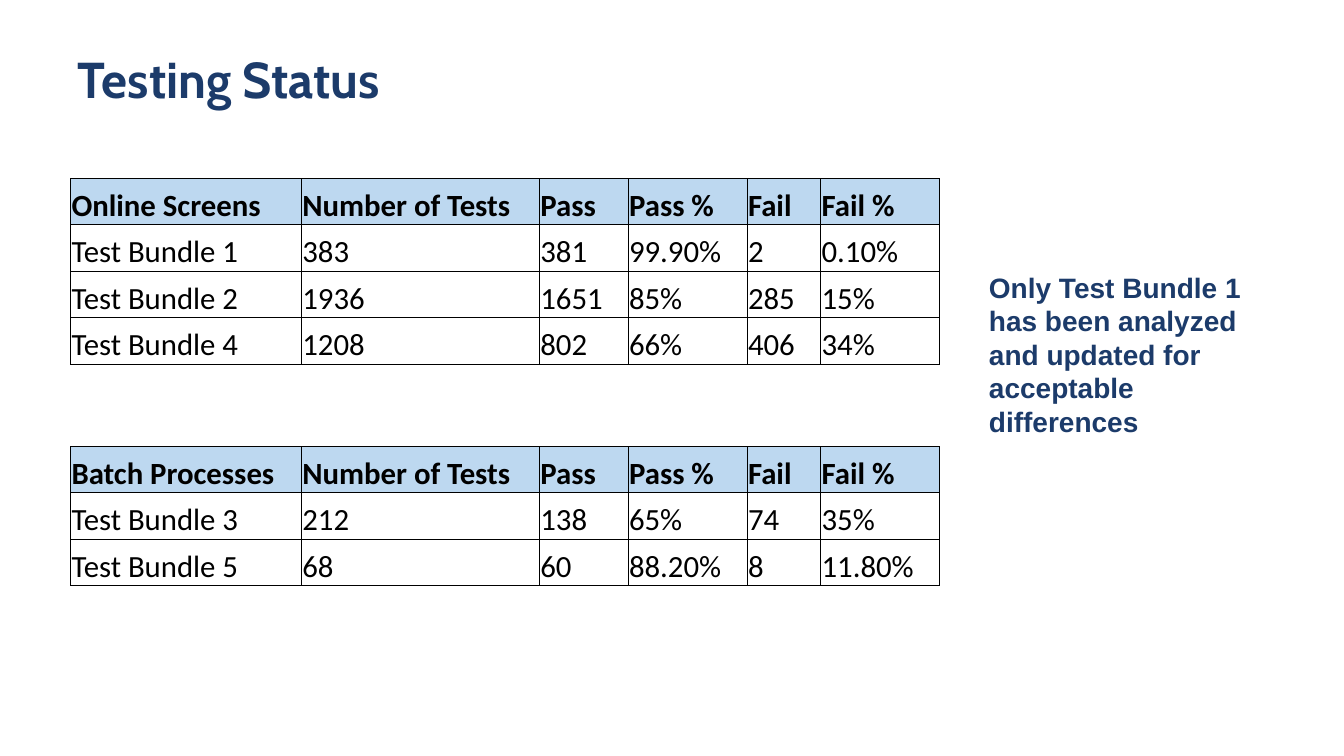
"""Build the testing status slide with its results table and side note."""
from dataclasses import dataclass

import lxml.etree
import pptx
import pptx.dml.color
import pptx.enum.text
import pptx.oxml.ns
import pptx.util

TITLE = "Testing Status"
NOTE = "Only Test Bundle 1 has been analyzed and updated for acceptable differences"
MEASURES = ("Number of Tests", "Pass", "Pass %", "Fail", "Fail %")
ONLINE_SCREENS = [
    ("Online Screens", *MEASURES),
    ("Test Bundle 1", "383", "381", "99.90%", "2", "0.10%"),
    ("Test Bundle 2", "1936", "1651", "85%", "285", "15%"),
    ("Test Bundle 4", "1208", "802", "66%", "406", "34%"),
]
BATCH_PROCESSES = [
    ("Batch Processes", *MEASURES),
    ("Test Bundle 3", "212", "138", "65%", "74", "35%"),
    ("Test Bundle 5", "68", "60", "88.20%", "8", "11.80%"),
]
SPACER = ("",) * (len(MEASURES) + 1)
ROWS = [*ONLINE_SCREENS, SPACER, *BATCH_PROCESSES]
HEADERS = (ONLINE_SCREENS[0], BATCH_PROCESSES[0])

SLIDE_SIZE = (13.33, 7.5)
TITLE_BOX = (0.67, 0.13, 11.5, 1.01)
NOTE_BOX = (9.71, 2.63, 3.09, 1.78)
TABLE_CORNER = (0.7, 1.77)
COLUMN_WIDTHS = (2.29, 2.36, 0.88, 1.18, 0.73, 1.18)
ROW_HEIGHT, SPACER_HEIGHT = 0.46, 0.82
CELL_INSET = 0.01


@dataclass(frozen=True)
class Theme:
    """Hold the colours, fonts and sizes of the slide."""
    navy: str = "1C3B6A"
    black: str = "000000"
    header_fill: str = "BDD8F0"
    title_font: str = "Cabin"
    note_font: str = "Arial"
    table_font: str = "Calibri"
    title_size: int = 36
    note_size: int = 20
    table_size: int = 22
    border_width: float = 0.5


THEME = Theme()


def inches(values):
    """Convert numbers to slide lengths."""
    return [pptx.util.Inches(value) for value in values]


def add_run(paragraph, text, font, size, color, bold):
    """Add one formatted run to a paragraph."""
    run = paragraph.add_run()
    run.text = text
    run.font.name = font
    run.font.size = pptx.util.Pt(size)
    run.font.bold = bold
    run.font.color.rgb = pptx.dml.color.RGBColor.from_string(color)


def set_borders(cell, visible_sides):
    """Draw the named sides of a cell and clear the others."""
    properties = cell._tc.get_or_add_tcPr()
    qn = pptx.oxml.ns.qn
    for position, side in enumerate("LRTB"):
        line = lxml.etree.Element(qn(f"a:ln{side}"))
        line.set("w", str(pptx.util.Pt(THEME.border_width)))
        if side in visible_sides:
            fill = lxml.etree.SubElement(line, qn("a:solidFill"))
            lxml.etree.SubElement(fill, qn("a:srgbClr")).set("val", THEME.black)
        else:
            lxml.etree.SubElement(line, qn("a:noFill"))
        properties.insert(position, line)


def fill_cell(cell, text, is_header):
    """Format one table cell and write its text."""
    cell.vertical_anchor = pptx.enum.text.MSO_ANCHOR.BOTTOM
    cell.margin_left = cell.margin_right = cell.margin_top = pptx.util.Inches(CELL_INSET)
    cell.margin_bottom = 0
    if is_header:
        cell.fill.solid()
        cell.fill.fore_color.rgb = pptx.dml.color.RGBColor.from_string(THEME.header_fill)
    else:
        cell.fill.background()
    if text:
        add_run(cell.text_frame.paragraphs[0], text, THEME.table_font,
                THEME.table_size, THEME.black, is_header)
    set_borders(cell, "LRTB" if text else "TB")


def add_title(slide):
    """Place and format the title placeholder."""
    title = slide.shapes.title
    title.left, title.top, title.width, title.height = inches(TITLE_BOX)
    title.text_frame.vertical_anchor = pptx.enum.text.MSO_ANCHOR.BOTTOM
    paragraph = title.text_frame.paragraphs[0]
    paragraph.alignment = pptx.enum.text.PP_ALIGN.LEFT
    paragraph.line_spacing = 0.9
    add_run(paragraph, TITLE, THEME.title_font, THEME.title_size, THEME.navy, True)


def add_note(slide):
    """Add the note beside the table."""
    frame = slide.shapes.add_textbox(*inches(NOTE_BOX)).text_frame
    frame.word_wrap = True
    frame.auto_size = pptx.enum.text.MSO_AUTO_SIZE.SHAPE_TO_FIT_TEXT
    add_run(frame.paragraphs[0], NOTE, THEME.note_font, THEME.note_size, THEME.navy, True)


def add_results(slide):
    """Add both groups of results as one table with a spacer row."""
    heights = [SPACER_HEIGHT if row == SPACER else ROW_HEIGHT for row in ROWS]
    table = slide.shapes.add_table(
        len(ROWS), len(COLUMN_WIDTHS),
        *inches((*TABLE_CORNER, sum(COLUMN_WIDTHS), sum(heights)))).table
    table.first_row = table.horz_banding = False
    for column, width in zip(table.columns, inches(COLUMN_WIDTHS)):
        column.width = width
    for table_row, height, values in zip(table.rows, inches(heights), ROWS):
        table_row.height = height
        for cell, text in zip(table_row.cells, values):
            fill_cell(cell, text, values in HEADERS)


def main():
    """Create and save the presentation."""
    presentation = pptx.Presentation()
    presentation.slide_width, presentation.slide_height = inches(SLIDE_SIZE)
    slide = presentation.slides.add_slide(presentation.slide_layouts.get_by_name("Title Only"))
    add_title(slide)
    add_note(slide)
    add_results(slide)
    presentation.save("out.pptx")


if __name__ == "__main__":
    main()
